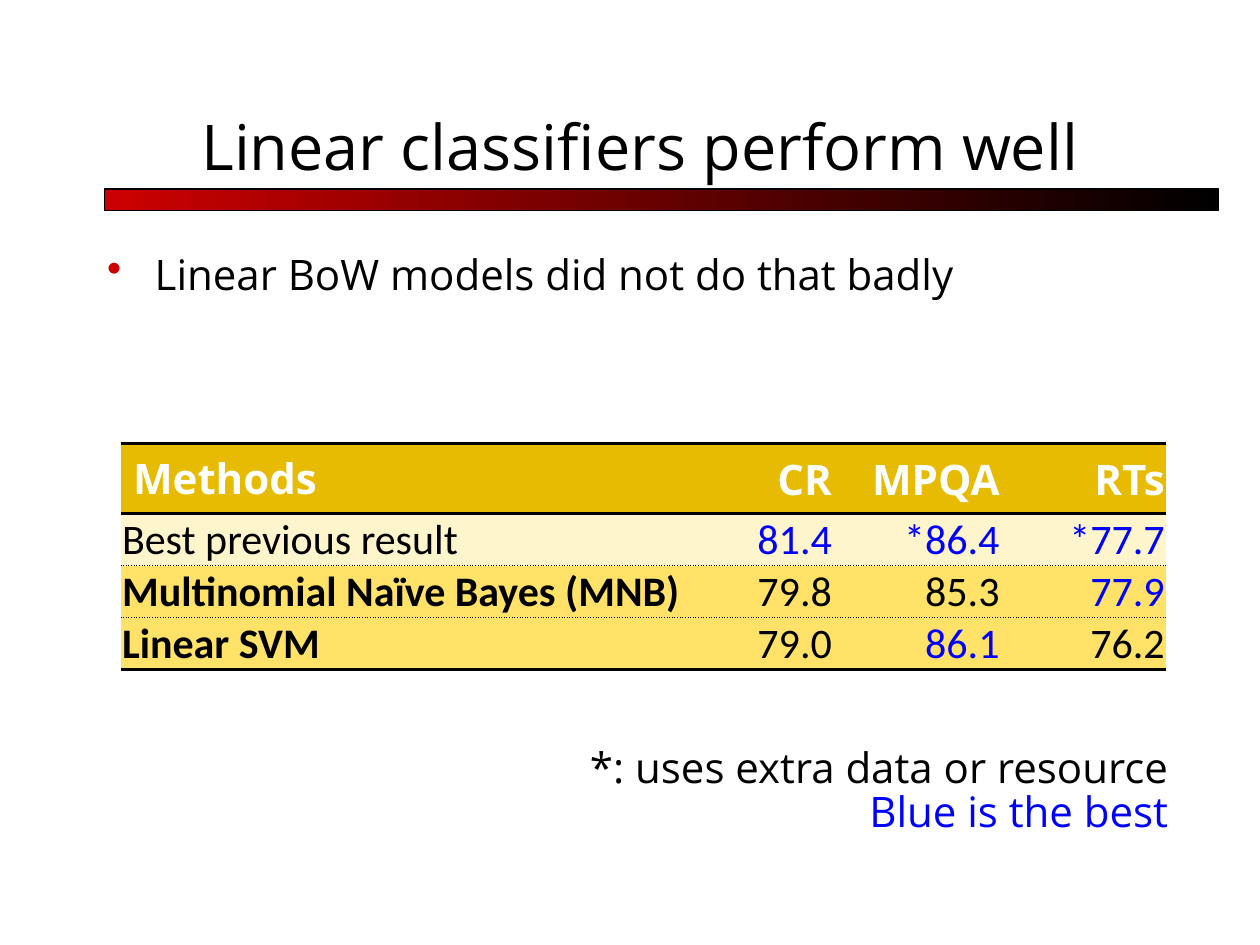
from pptx import Presentation
from pptx.dml.color import RGBColor as Rgb
from pptx.enum.shapes import MSO_SHAPE as Shape
from pptx.enum.text import MSO_ANCHOR as Anchor, PP_ALIGN as Align
from pptx.oxml import parse_xml
from pptx.oxml.ns import nsdecls
from pptx.util import Cm, Pt

TITLE = "Linear classifiers perform well"
POINT = "Linear BoW models did not do that badly"
HEAD = ("Methods", "CR", "MPQA", "RTs")
ROWS = [
    ("Best previous result", "81.4", "*86.4", "*77.7"),
    ("Multinomial Naïve Bayes (MNB)", "79.8", "85.3", "77.9"),
    ("Linear SVM", "79.0", "86.1", "76.2"),
]
BEST = {"81.4", "*86.4", "*77.7", "77.9", "86.1"}
NOTES = [("*: uses extra data or resource", "ink", 1.0), ("Blue is the best", "blue", 0.88)]

THEME = {
    "ink": "000000", "white": "FFFFFF", "blue": "0000FF", "red": "CC0000",
    "head": "E7BB01", "pale": "FFF5CC", "gold": "FFE267",
    "font": "Open Sans", "cell": "Calibri", "title": 36, "text": 24,
}
FILLS = ("head", "pale", "gold", "gold")
WIDTHS = (11.4, 2.97, 3.38, 3.33)
HEIGHTS = (1.41, 1.05, 1.05, 1.05)
SOLID, DOTS = (2, "solid"), (1, "sysDot")
EDGES = (SOLID, SOLID, DOTS, DOTS, SOLID)


def tint(key):
    return Rgb.from_string(THEME[key])


def apply(item, form):
    for key, val in form.items():
        setattr(item, key, val)


def write(para, text, ink="ink", size="text", face="font", bold=False, **form):
    apply(para, form)
    run = para.add_run()
    run.text = text
    apply(run.font, {"name": THEME[face], "size": Pt(THEME[size]), "bold": bold})
    run.font.color.rgb = tint(ink)


def frame(slide, *box, anchor=Anchor.TOP):
    text = slide.shapes.add_textbox(*map(Cm, box)).text_frame
    apply(text, {"word_wrap": True, "vertical_anchor": anchor})
    return text


def edge(side, line):
    if line is None:
        return parse_xml(f'<a:{side} {nsdecls("a")} w="0"><a:noFill/></a:{side}>')
    width, dash = line
    return parse_xml(
        f'<a:{side} {nsdecls("a")} w="{Pt(width)}"><a:solidFill>'
        f'<a:srgbClr val="{THEME["ink"]}"/></a:solidFill>'
        f'<a:prstDash val="{dash}"/></a:{side}>')


def draw_bar(slide):
    bar = slide.shapes.add_shape(Shape.RECTANGLE, Cm(2.11), Cm(3.81), Cm(22.45), Cm(0.43))
    bar.shadow.inherit = False
    bar.fill.gradient()
    bar.fill.gradient_angle = 0
    for stop, key, spot in zip(bar.fill.gradient_stops, ("red", "ink"), (0, 1)):
        stop.color.rgb = tint(key)
        stop.position = spot
    bar.line.color.rgb = tint("ink")
    bar.line.width = Pt(0.75)


def draw_point(slide):
    para = frame(slide, 1.91, 4.88, 21.59, 2.36).paragraphs[0]
    props = para._p.get_or_add_pPr()
    props.set("marL", str(Cm(0.96)))
    props.set("indent", str(-Cm(0.96)))
    props.append(parse_xml(
        f'<a:buClr {nsdecls("a")}><a:srgbClr val="{THEME["red"]}"/></a:buClr>'))
    props.append(parse_xml(f'<a:buChar {nsdecls("a")} char="•"/>'))
    write(para, POINT)


def draw_cell(cell, text, row, col):
    top, lead = row == 0, col == 0
    cell.fill.solid()
    cell.fill.fore_color.rgb = tint(FILLS[row])
    form = {"vertical_anchor": Anchor.MIDDLE if top else Anchor.BOTTOM}
    if not (top and lead):
        form |= {"margin_left": Cm(0.03), "margin_right": Cm(0.03),
                 "margin_top": Cm(0.03), "margin_bottom": 0}
    apply(cell, form)
    write(cell.text_frame.paragraphs[0], text,
          ink="white" if top else "blue" if text in BEST else "ink",
          face="font" if top else "cell",
          bold=top or (lead and row > 1),
          alignment=Align.LEFT if lead else Align.RIGHT)
    props = cell._tc.get_or_add_tcPr()
    lines = {"lnL": None, "lnR": None, "lnT": EDGES[row], "lnB": EDGES[row + 1]}
    for spot, (side, line) in enumerate(lines.items()):
        props.insert(spot, edge(side, line))


def draw_table(slide):
    data = [HEAD, *ROWS]
    grid = slide.shapes.add_table(
        len(data), len(HEAD), Cm(2.43), Cm(8.94),
        Cm(sum(WIDTHS)), Cm(sum(HEIGHTS))).table
    apply(grid, {"first_row": False, "horz_banding": False})
    for col, width in zip(grid.columns, WIDTHS):
        col.width = Cm(width)
    for row, height in zip(grid.rows, HEIGHTS):
        row.height = Cm(height)
    for row, texts in enumerate(data):
        for col, text in enumerate(texts):
            draw_cell(grid.cell(row, col), text, row, col)


def draw_notes(slide):
    text = frame(slide, 8.94, 14.83, 14.86, 3.33)
    for num, (note, ink, gap) in enumerate(NOTES):
        para = text.add_paragraph() if num else text.paragraphs[0]
        write(para, note, ink, alignment=Align.RIGHT, line_spacing=gap)


def main():
    deck = Presentation()
    apply(deck, {"slide_width": Cm(25.4), "slide_height": Cm(19.05)})
    slide = deck.slides.add_slide(deck.slide_layouts[6])
    draw_bar(slide)
    title = frame(slide, 3.81, 1.07, 21.59, 2.74, anchor=Anchor.BOTTOM)
    write(title.paragraphs[0], TITLE, size="title")
    draw_point(slide)
    draw_table(slide)
    draw_notes(slide)
    deck.save("out.pptx")


if __name__ == "__main__":
    main()
